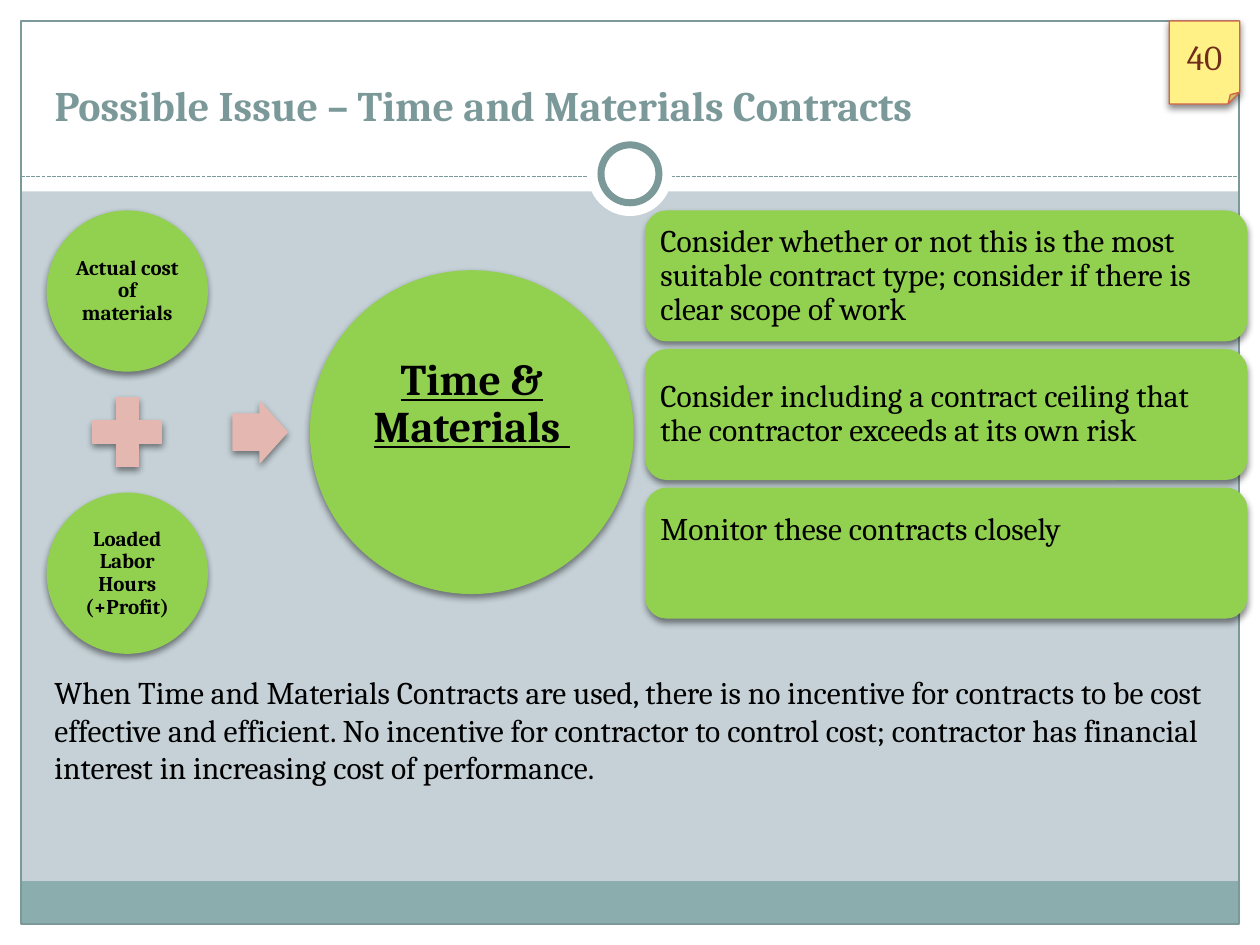
from lxml.etree import SubElement
from pptx import Presentation
from pptx.dml.color import RGBColor
from pptx.enum.dml import MSO_LINE
from pptx.enum.shapes import MSO_CONNECTOR, MSO_SHAPE as Shape
from pptx.enum.text import MSO_ANCHOR as Anchor, MSO_AUTO_SIZE as AutoSize, PP_ALIGN as Align
from pptx.oxml.ns import qn
from pptx.util import Inches, Pt

FONT = "Cambria"
W, H = 10, 7.5
MARGIN = W / 60
COLORS = {
    "back": "C5D1D7", "white": "FFFFFF", "band": "8CADAE", "frame": "7C999A",
    "green": "92D050", "pink": "E5B7B1", "note": "FFF185", "note_line": "D16349",
    "note_text": "712D1C", "text": "000000", "shadow": "000000",
}
ADVICE = [
    "Consider whether or not this is the most suitable contract type; "
    "consider if there is clear scope of work",
    "Consider including a contract ceiling that the contractor exceeds at its own risk",
    "Monitor these contracts closely",
]
SUMMARY = (
    "When Time and Materials Contracts are used, there is no incentive for contracts "
    "to be cost effective and efficient. No incentive for contractor to control cost; "
    "contractor has financial interest in increasing cost of performance."
)


def rgb(name):
    """Return the named palette colour."""
    return RGBColor.from_string(COLORS[name])


def emu(*lengths):
    """Convert lengths in inches to slide units."""
    return [Inches(n) for n in lengths]


def add_shadow(sp):
    """Give a shape a soft shadow that falls straight down."""
    effects = sp._element.spPr.find(qn("a:effectLst"))
    outer = SubElement(effects, qn("a:outerShdw"), blurRad=str(Pt(4)),
                       dist=str(Pt(2)), dir="5400000", rotWithShape="0")
    color = SubElement(outer, qn("a:srgbClr"), val=COLORS["shadow"])
    SubElement(color, qn("a:alpha"), val="45000")


def add_block(s, kind, box, fill=None, line=None, width=0.75, shadow=False):
    """Add a preset shape with the given fill, outline and shadow."""
    sp = s.shapes.add_shape(kind, *emu(*box))
    sp.shadow.inherit = False
    if fill:
        sp.fill.solid()
        sp.fill.fore_color.rgb = rgb(fill)
    else:
        sp.fill.background()
    if line:
        sp.line.color.rgb = rgb(line)
        sp.line.width = Pt(width)
    else:
        sp.line.fill.background()
    if shadow:
        add_shadow(sp)
    return sp


def write(sp, text, size, color="text", bold=None, underline=None, align=Align.LEFT,
          anchor=Anchor.MIDDLE, inset=None, lift=0, spacing=None):
    """Fill a shape with one paragraph, lifted by a deeper bottom inset."""
    tf = sp.text_frame
    tf.word_wrap = True
    tf.vertical_anchor = anchor
    if inset is not None:
        tf.margin_left = tf.margin_top = tf.margin_right = Inches(inset)
        tf.margin_bottom = Inches(inset + lift)
    tf.text = text
    p = tf.paragraphs[0]
    p.alignment, p.line_spacing = align, spacing
    p.font.name, p.font.size = FONT, Pt(size)
    p.font.bold, p.font.underline = bold, underline
    p.font.color.rgb = rgb(color)


def add_frame(s, box):
    """Draw the white border, header, footer band and divider around a box."""
    x, y, w, h = box
    divider, band = 1.4, 0.34
    for edge in [(0, H - y, W, y), (0, 0, W, 1.52), (0, 0, x, H), (W - x, 0, x, H)]:
        add_block(s, Shape.RECTANGLE, edge, "white")
    add_block(s, Shape.RECTANGLE, (x, y + h - band, w, band), "band")
    add_block(s, Shape.RECTANGLE, box, line="frame")
    rule = s.shapes.add_connector(MSO_CONNECTOR.STRAIGHT, *emu(x, divider, x + w, divider))
    rule.line.color.rgb = rgb("frame")
    rule.line.width = Pt(0.75)
    rule.line.dash_style = MSO_LINE.SQUARE_DOT
    SubElement(rule._element.spPr, qn("a:effectLst"))
    for d, line in [(0.67, None), (0.46, "frame")]:
        ring = (x + w / 2 - d / 2, divider - 0.02 - d / 2, d, d)
        add_block(s, Shape.OVAL, ring, "white", line, 4)


def add_number(s, box):
    """Add the slide number on a sticky note."""
    sp = add_block(s, Shape.FOLDED_CORNER, box, "note", "note_line", shadow=True)
    write(sp, "40", 20, "note_text", align=Align.CENTER)


def add_title(s, box):
    """Place the title placeholder in front of the frame."""
    title = s.shapes.title
    title.left, title.top, title.width, title.height = emu(*box)
    write(title, "Possible Issue – Time and Materials Contracts", 24, "frame",
          bold=True, anchor=Anchor.BOTTOM)
    title.text_frame.auto_size = AutoSize.NONE
    title._element.getparent().append(title._element)


def add_equation(s, box):
    """Draw two cost circles that add up to the large circle."""
    x, y, w, h = box
    small, big, plus = 1.28, 2.57, 0.74
    middle = y + h / 2
    circles = [
        (x, y, small, "Actual cost of materials", 12, None, 0.02, 0),
        (x, y + h - small, small, "Loaded Labor Hours (+Profit)", 12, None, 0.02, 0),
        (x + w - big, middle - big / 2, big, "Time & Materials ", 25, True, 0.03, 0.43),
    ]
    for left, top, d, text, size, underline, inset, lift in circles:
        sp = add_block(s, Shape.OVAL, (left, top, d, d), "green", shadow=True)
        write(sp, text, size, bold=True, underline=underline, align=Align.CENTER,
              inset=inset, lift=lift, spacing=0.9)
    add_block(s, Shape.MATH_PLUS, (x + (small - plus) / 2, middle - plus / 2, plus, plus),
              "pink", "pink", shadow=True)
    arrow = add_block(s, Shape.RIGHT_ARROW, (x + small + 0.2, middle - 0.24, 0.43, 0.48),
                      "pink", "pink", shadow=True)
    arrow.adjustments[0] = 0.6


def add_advice(s, box):
    """Stack the advice cards in equal rows."""
    x, y, w, h = box
    gap = 0.06
    row = (h + gap) / len(ADVICE)
    for i, text in enumerate(ADVICE):
        sp = add_block(s, Shape.ROUNDED_RECTANGLE, (x, y + i * row, w, row - gap),
                       "green", shadow=True)
        lift = 0.37 if i == len(ADVICE) - 1 else 0
        write(sp, text, 18, inset=0.07, lift=lift, spacing=0.9)


def add_summary(s, box):
    """Add the closing paragraph."""
    write(s.shapes.add_textbox(*emu(*box)), SUMMARY, 18, anchor=Anchor.TOP)


def main():
    """Build and save the slide."""
    prs = Presentation()
    prs.slide_width, prs.slide_height = emu(W, H)
    s = prs.slides.add_slide(prs.slide_layouts[5])
    s.background.fill.solid()
    s.background.fill.fore_color.rgb = rgb("back")
    left, top, text_w = W / 30, 1.67, W * 14 / 15
    add_frame(s, (MARGIN, MARGIN, W - 2 * MARGIN, H - 2 * MARGIN))
    add_number(s, (9.28, MARGIN, 0.56, 0.66))
    add_title(s, (left, H / 30, text_w, H / 9))
    add_equation(s, (0.37, top, 4.66, 3.52))
    add_advice(s, (5.12, top, 4.78, 3.24))
    add_summary(s, (left, 5.29, text_w, 1.01))
    prs.save("out.pptx")


if __name__ == "__main__":
    main()
